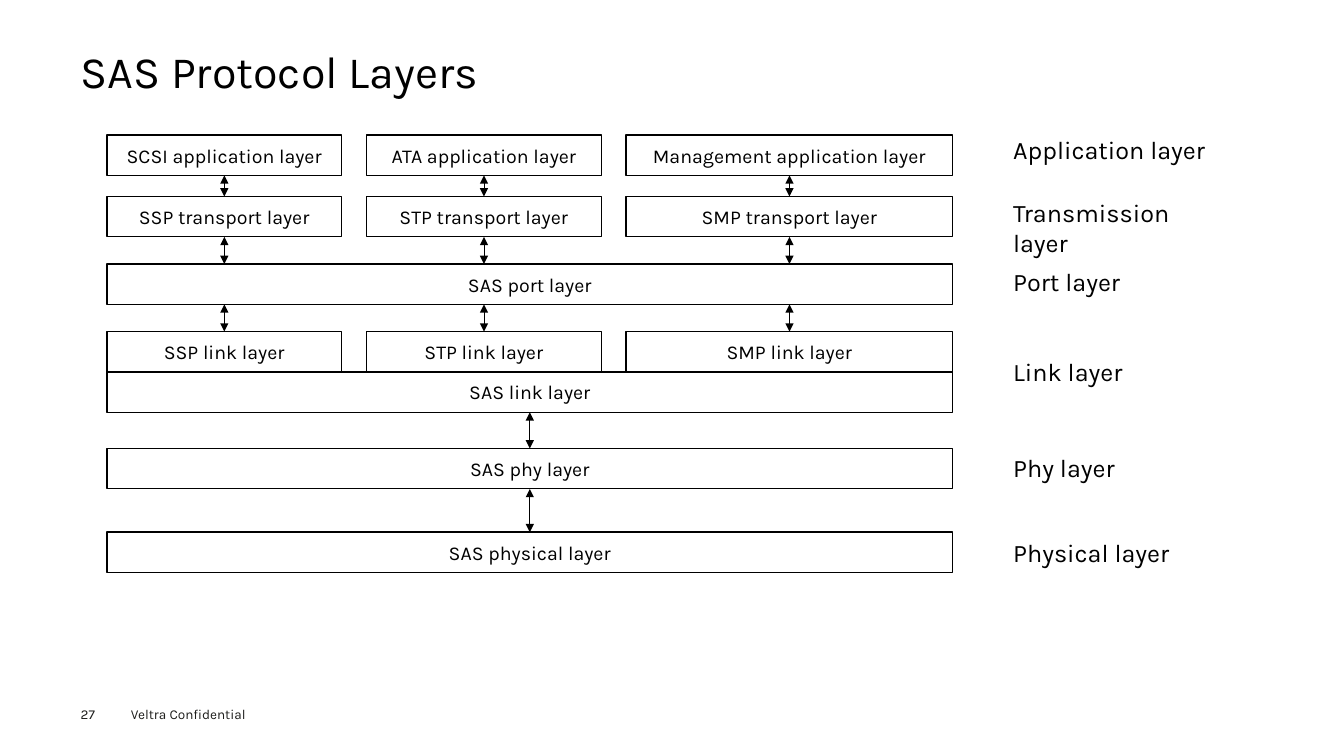
from dataclasses import dataclass
from itertools import accumulate
from lxml.etree import SubElement
from pptx import Presentation
from pptx.dml.color import RGBColor
from pptx.enum.shapes import MSO_CONNECTOR, MSO_SHAPE
from pptx.enum.text import MSO_ANCHOR, MSO_AUTO_SIZE, PP_ALIGN
from pptx.oxml.ns import qn
from pptx.util import Inches, Pt


@dataclass(frozen=True)
class Theme:
    """Colours, type sizes and grid step of the slide."""
    font: str = "Karla"
    ink: RGBColor = RGBColor(0, 0, 0)
    soft: RGBColor = RGBColor(0x1D, 0x1D, 0x1B)
    head: float = 32
    label: float = 18
    body: float = 14
    small: float = 9.7
    edge: float = 1
    thin: float = 0.5
    cell: int = Inches(0.1)


class Sheet:
    """Draws styled elements on one slide, in grid columns and rows."""

    def __init__(self, deck, theme):
        """Adds a title-only slide to the deck."""
        self.theme = theme
        self.slide = deck.slides.add_slide(deck.slide_layouts[5])
        self.shapes = self.slide.shapes

    def grid(self, *cells):
        """Turns grid steps into lengths."""
        return [round(n * self.theme.cell) for n in cells]

    def fill(self, frame, text, size, color, align=PP_ALIGN.LEFT, bare=False):
        """Puts one styled paragraph in a frame."""
        frame.word_wrap = True
        frame.text = text
        if bare:
            frame.margin_left = frame.margin_right = 0
            frame.margin_top = frame.margin_bottom = 0
        line = frame.paragraphs[0]
        line.alignment = align
        line.font.name = self.theme.font
        line.font.size = Pt(size)
        line.font.color.rgb = color
        return line

    def title(self, text, *area):
        """Moves and fills the title placeholder."""
        head = self.shapes.title
        head.left, head.top, head.width, head.height = self.grid(*area)
        frame = head.text_frame
        frame.auto_size = MSO_AUTO_SIZE.NONE
        frame.vertical_anchor = MSO_ANCHOR.TOP
        line = self.fill(frame, text, self.theme.head, self.theme.ink, bare=True)
        line.line_spacing = 0.9

    def text(self, text, area, size, color, bare=False):
        """Adds a plain text box."""
        box = self.shapes.add_textbox(*self.grid(*area))
        self.fill(box.text_frame, text, size, color, bare=bare)

    def box(self, text, *area):
        """Adds an outlined box with centred text."""
        box = self.shapes.add_shape(MSO_SHAPE.RECTANGLE, *self.grid(*area))
        box.shadow.inherit = False
        box.fill.background()
        box.line.color.rgb = self.theme.ink
        box.line.width = Pt(self.theme.edge)
        box.text_frame.vertical_anchor = MSO_ANCHOR.MIDDLE
        self.fill(box.text_frame, text, self.theme.body, self.theme.ink,
                  PP_ALIGN.CENTER)
        return box

    def arrow(self, top, low):
        """Links two boxes with a two-headed arrow at the narrower one's middle."""
        slim = min(top, low, key=lambda box: box.width)
        mid = slim.left + slim.width // 2
        line = self.shapes.add_connector(
            MSO_CONNECTOR.STRAIGHT, mid, top.top + top.height, mid, low.top)
        if top.width == slim.width:
            line.begin_connect(top, 2)
        if low.width == slim.width:
            line.end_connect(low, 0)
        line.line.color.rgb = self.theme.ink
        line.line.width = Pt(self.theme.thin)
        props = line._element.spPr
        for end in ("a:headEnd", "a:tailEnd"):
            SubElement(props.get_or_add_ln(), qn(end), type="triangle")
        SubElement(props, qn("a:effectLst"))


def main():
    """Builds and saves the slide."""
    deck = Presentation()
    deck.slide_width, deck.slide_height = Inches(13.33), Inches(7.5)
    theme = Theme()
    sheet = Sheet(deck, theme)
    sheet.title("SAS Protocol Layers", 8, 4.9, 117.3, 5.4)

    left, gap, high = 10.6, 2.45, 4
    wides = (23.3, 23.3, 32.4)
    full = sum(wides) + gap * (len(wides) - 1)
    cols = list(accumulate(wides[:-1], lambda x, w: x + w + gap, initial=left))
    layers = (
        (13.4, ("SCSI application layer", "ATA application layer",
                "Management application layer")),
        (19.5, ("SSP transport layer", "STP transport layer",
                "SMP transport layer")),
        (26.2, ("SAS port layer",)),
        (32.9, ("SSP link layer", "STP link layer", "SMP link layer")),
        (36.9, ("SAS link layer",)),
        (44.5, ("SAS phy layer",)),
        (52.8, ("SAS physical layer",)),
    )
    rows = []
    for row, names in layers:
        spans = zip(cols, wides) if len(names) > 1 else [(left, full)]
        rows.append([sheet.box(name, x, row, wide, high)
                     for name, (x, wide) in zip(names, spans)])

    labels = (
        ("Application layer", 12.8, 21.4),
        ("Transmission layer", 19.1, 23.4),
        ("Port layer", 25.9, 13.2),
        ("Link layer", 34.9, 13.2),
        ("Phy layer", 44.4, 13.2),
        ("Physical layer", 52.8, 17.5),
    )
    for name, row, wide in labels:
        sheet.text(name, (99.5, row, wide, high), theme.label, theme.ink)

    apps, moves, port, links, base, phy, wire = rows
    pairs = (*zip(apps, moves), *zip(moves, port * 3), *zip(port * 3, links),
             *zip(base, phy), *zip(phy, wire))
    for top, low in pairs:
        sheet.arrow(top, low)

    sheet.text("27", (8, 70, 5.5, 1.6), theme.small, theme.soft, bare=True)
    sheet.text("Veltra Confidential", (12, 69.5, 16, 2.7), theme.small, theme.soft)
    deck.save("out.pptx")


if __name__ == "__main__":
    main()
